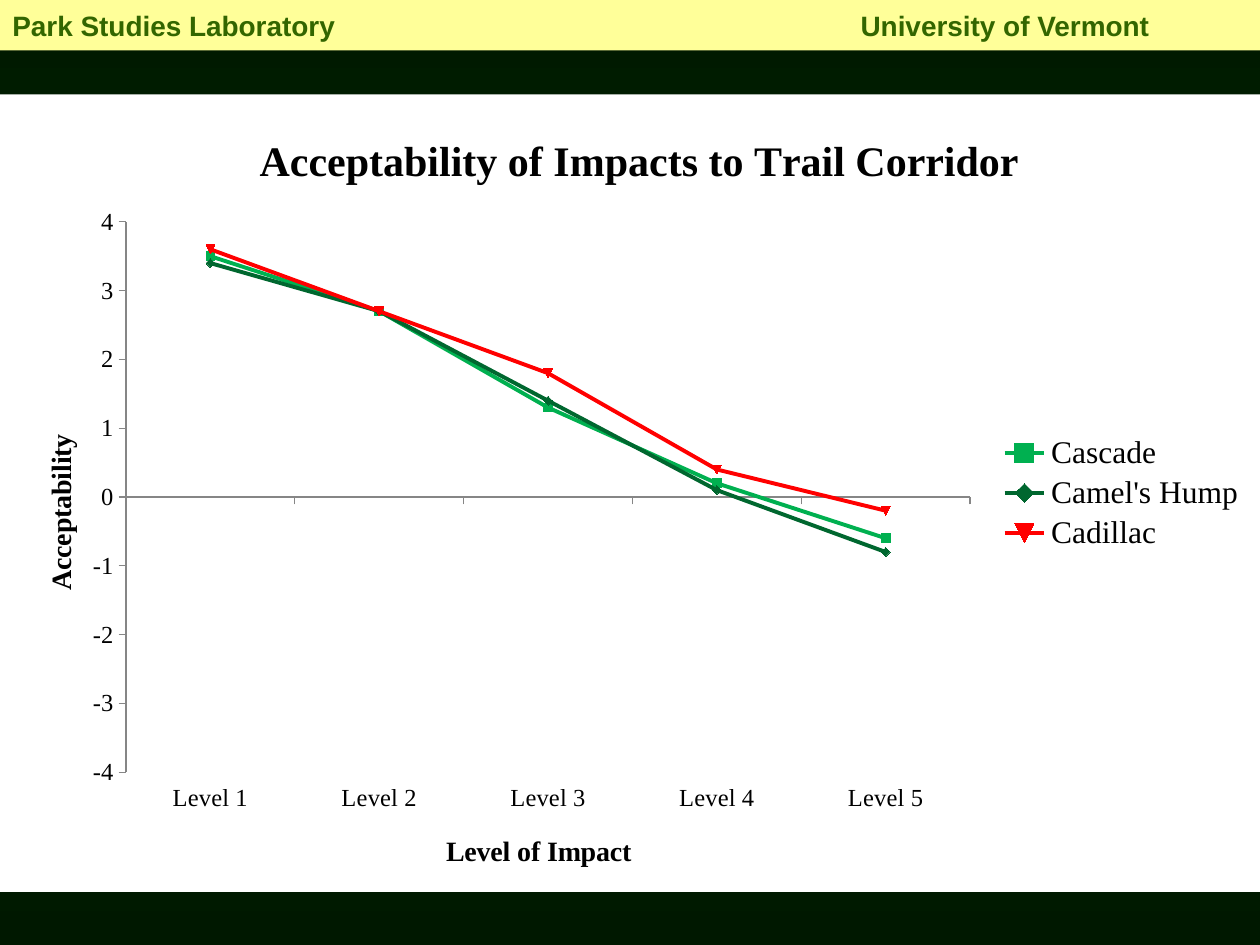
from copy import deepcopy

from lxml.etree import SubElement
from pptx import Presentation
from pptx.chart.data import CategoryChartData
from pptx.dml.color import RGBColor
from pptx.enum.chart import XL_CHART_TYPE as ChartType
from pptx.enum.chart import XL_LEGEND_POSITION as LegendPosition
from pptx.enum.chart import XL_MARKER_STYLE as MarkerStyle
from pptx.enum.chart import XL_TICK_LABEL_POSITION as LabelPosition
from pptx.enum.chart import XL_TICK_MARK as TickMark
from pptx.enum.shapes import MSO_SHAPE as Shape
from pptx.enum.text import MSO_ANCHOR as Anchor
from pptx.enum.text import PP_ALIGN as Align
from pptx.oxml import parse_xml
from pptx.oxml.ns import nsdecls, qn
from pptx.util import Cm, Pt

BLACK = RGBColor(0x00, 0x00, 0x00)
WHITE = RGBColor(0xFF, 0xFF, 0xFF)
GREY = RGBColor(0x86, 0x86, 0x86)
NIGHT = RGBColor(0x00, 0x18, 0x00)
FOREST = RGBColor(0x00, 0x33, 0x00)
CREAM = RGBColor(0xFF, 0xFF, 0x99)
OLIVE = RGBColor(0x33, 0x66, 0x00)
GREEN = RGBColor(0x00, 0xB0, 0x50)
DARK_GREEN = RGBColor(0x00, 0x67, 0x2F)
RED = RGBColor(0xFF, 0x00, 0x00)

SERIF = "Times New Roman"
WIDTH, HEIGHT = Cm(25.4), Cm(19.05)

LABORATORY = "Park Studies Laboratory"
UNIVERSITY = "University of Vermont"
CHART_TITLE = "Acceptability of Impacts to Trail Corridor"
IMPACT_TITLE = "Level of Impact"
ACCEPTABILITY_TITLE = "Acceptability"
LEVELS = [f"Level {number}" for number in range(1, 6)]
TRAILS = [
    ("Cascade", GREEN, (3.5, 2.7, 1.3, 0.2, -0.6)),
    ("Camel's Hump", DARK_GREEN, (3.4, 2.7, 1.4, 0.1, -0.8)),
    ("Cadillac", RED, (3.6, 2.7, 1.8, 0.4, -0.2)),
]


def write(frame, text, size, font=SERIF, color=BLACK, align=Align.CENTER):
    paragraph = frame.paragraphs[0]
    paragraph.alignment = align
    run = paragraph.add_run()
    run.text = text
    run.font.name, run.font.size, run.font.bold = font, Pt(size), True
    run.font.color.rgb = color
    return paragraph


def place(part, after=None, **fractions):
    """Give a chart part a manual layout in fractions of the chart."""
    for old in part.findall(qn("c:layout")):
        part.remove(old)
    layout = parse_xml(f"<c:layout {nsdecls('c')}/>")
    manual = SubElement(layout, qn("c:manualLayout"))
    if after is None:
        SubElement(manual, qn("c:layoutTarget"), val="inner")
        part.insert(0, layout)
    else:
        part.find(qn(after)).addnext(layout)
    for side in ("xMode", "yMode"):
        SubElement(manual, qn(f"c:{side}"), val="edge")
    for side, fraction in fractions.items():
        SubElement(manual, qn(f"c:{side}"), val=str(fraction))


def paint_background(slide):
    fill = slide.background.fill
    fill.gradient()
    fill.gradient_angle = 90
    first = slide.element.xpath(".//a:gs")[0]
    first.addnext(deepcopy(first))
    for stop, color, position in zip(
            fill.gradient_stops, (NIGHT, FOREST, NIGHT), (0, 0.5, 1)):
        stop.color.rgb = color
        stop.position = position


def add_header(slide):
    header = slide.shapes.add_shape(Shape.RECTANGLE, 0, 0, WIDTH, Cm(1.02))
    header.shadow.inherit = False
    header.fill.solid()
    header.fill.fore_color.rgb = CREAM
    header.line.fill.background()
    header.text_frame.vertical_anchor = Anchor.MIDDLE
    line = write(header.text_frame, f"{LABORATORY}\t{UNIVERSITY}", 16,
                 font="Arial", color=OLIVE, align=Align.LEFT)
    stops = SubElement(line._p.get_or_add_pPr(), qn("a:tabLst"))
    SubElement(stops, qn("a:tab"), pos=str(Cm(17.1)), algn="l")


def format_axis(axis, title):
    axis.has_major_gridlines = False
    axis.major_tick_mark = TickMark.OUTSIDE
    axis.minor_tick_mark = TickMark.NONE
    axis.format.line.color.rgb = GREY
    axis.format.line.width = Pt(0.75)
    axis.tick_labels.font.size = Pt(14)
    write(axis.axis_title.text_frame, title, 16)


def add_acceptability_chart(slide):
    data = CategoryChartData(number_format="General")
    data.categories = LEVELS
    for trail, _, ratings in TRAILS:
        data.add_series(trail, ratings)
    chart = slide.shapes.add_chart(ChartType.LINE_MARKERS, 0, Cm(1.9),
                                   WIDTH, Cm(16.08), data).chart
    chart.font.name, chart.font.size = SERIF, Pt(10)
    chart.font.color.rgb = BLACK
    chart.element.find(qn("c:chart")).addnext(parse_xml(
        f"<c:spPr {nsdecls('c', 'a')}><a:solidFill><a:srgbClr val='{WHITE}'/>"
        "</a:solidFill><a:ln><a:noFill/></a:ln></c:spPr>"))

    chart.has_title = True
    write(chart.chart_title.text_frame, CHART_TITLE, 24)
    impact, acceptability = chart.category_axis, chart.value_axis
    format_axis(impact, IMPACT_TITLE)
    format_axis(acceptability, ACCEPTABILITY_TITLE)
    impact.tick_label_position = LabelPosition.LOW
    acceptability.minimum_scale, acceptability.maximum_scale = -4, 4
    acceptability.major_unit = 1
    turned = acceptability.axis_title.text_frame._txBody.find(qn("a:bodyPr"))
    turned.set("rot", "-5400000")
    turned.set("vert", "horz")

    chart.has_legend = True
    chart.legend.position = LegendPosition.RIGHT
    chart.legend.include_in_layout = False
    chart.legend.font.size = Pt(18)

    plot = chart.plots[0]
    plot.vary_by_categories = False
    for series, (_, color, _) in zip(plot.series, TRAILS):
        series.smooth = False
        series.format.line.width = Pt(2.25)
        marker = series.marker
        marker.style, marker.size = MarkerStyle.AUTOMATIC, 5
        marker.format.fill.solid()
        marker.format.fill.fore_color.rgb = color
        for line in (series.format.line, marker.format.line):
            line.color.rgb = color

    plot_area = chart.element.xpath("c:chart/c:plotArea")[0]
    legend = chart.element.xpath("c:chart/c:legend")[0]
    titles = chart.element.xpath(
        "c:chart/c:title | .//c:catAx/c:title | .//c:valAx/c:title")
    place(plot_area, x=0.1, y=0.16, w=0.67, h=0.69)
    place(legend, after="c:legendPos", x=0.79, y=0.42, w=0.2, h=0.16)
    for title, x, y in zip(titles, (0.2, 0.35, 0.03), (0.04, 0.92, 0.42)):
        place(title, after="c:tx", x=x, y=y)


def main():
    presentation = Presentation()
    presentation.slide_width, presentation.slide_height = WIDTH, HEIGHT
    slide = presentation.slides.add_slide(presentation.slide_layouts[6])
    paint_background(slide)
    add_acceptability_chart(slide)
    add_header(slide)
    presentation.save("out.pptx")


if __name__ == "__main__":
    main()
